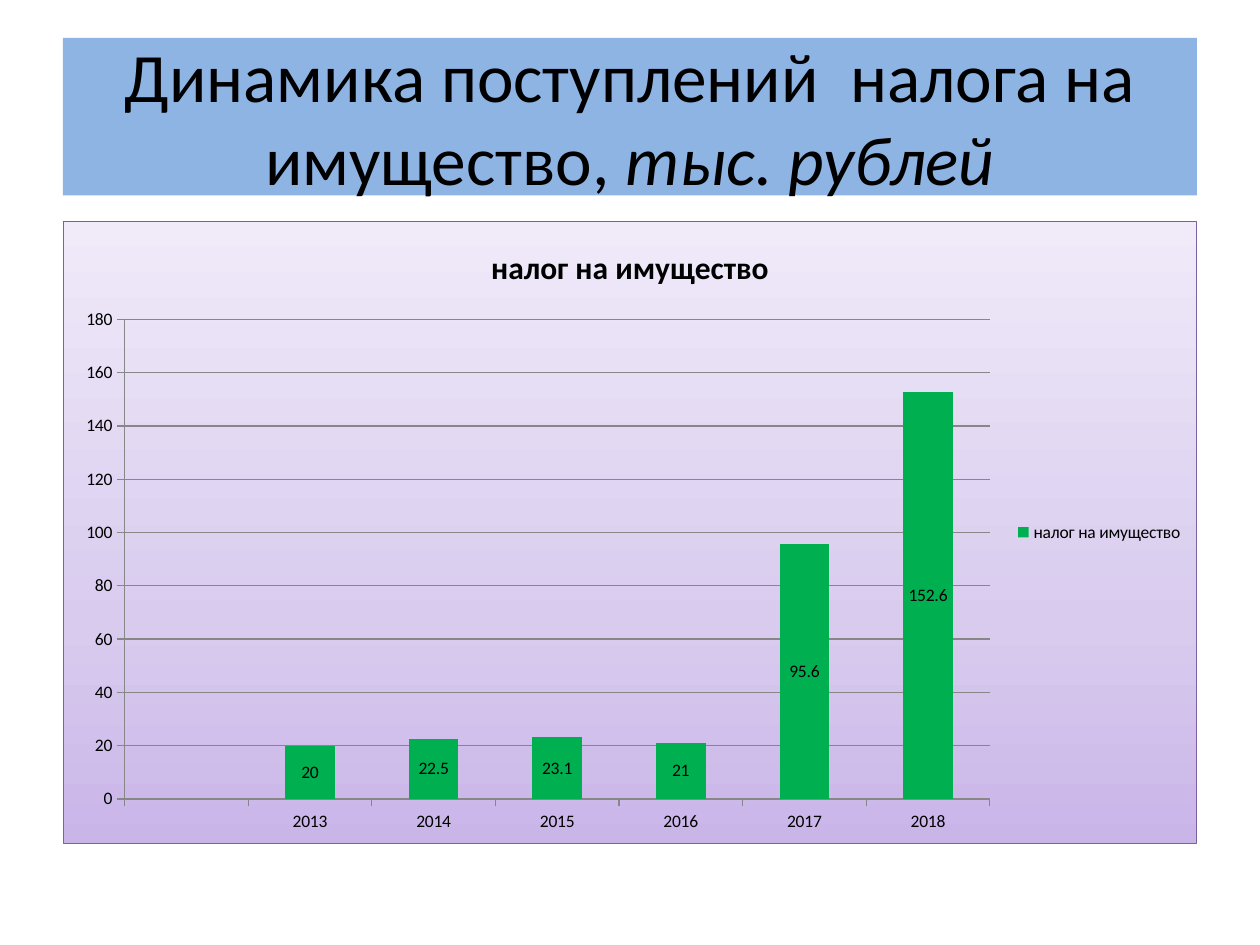
import pptx
import pptx.chart.data
import pptx.dml.color
import pptx.enum.chart
import pptx.enum.shapes
import pptx.enum.text
import pptx.oxml
import pptx.oxml.ns
import pptx.util

Pt = pptx.util.Pt


def tint(code):
    return pptx.dml.color.RGBColor.from_string(code)


class Deck:
    """Holds the style and the current slide, and adds elements to it."""

    font, ink, grey = "Calibri", "000000", "878787"

    def __init__(self, wide, high):
        self.file = pptx.Presentation()
        self.file.slide_width, self.file.slide_height = Pt(wide), Pt(high)
        self.slide = self.file.slides.add_slide(self.file.slide_layouts[6])

    def style(self, font, size, bold=False, slant=False):
        font.name, font.size = self.font, Pt(size)
        font.bold, font.italic = bold, slant
        font.color.rgb = tint(self.ink)

    def banner(self, box, fill, size, runs):
        kind = pptx.enum.shapes.MSO_SHAPE.RECTANGLE
        shape = self.slide.shapes.add_shape(kind, *map(Pt, box))
        shape.shadow.inherit = False
        shape.fill.solid()
        shape.fill.fore_color.rgb = tint(fill)
        shape.line.fill.background()
        frame = shape.text_frame
        frame.word_wrap = True
        frame.vertical_anchor = pptx.enum.text.MSO_ANCHOR.MIDDLE
        para = frame.paragraphs[0]
        para.alignment = pptx.enum.text.PP_ALIGN.CENTER
        for text, slant in runs:
            run = para.add_run()
            run.text = text
            self.style(run.font, size, slant=slant)

    def columns(self, box, name, years, sums, fill):
        enum = pptx.enum.chart
        data = pptx.chart.data.CategoryChartData()
        data.categories = years
        data.add_series(name, sums)
        kind = enum.XL_CHART_TYPE.COLUMN_STACKED
        chart = self.slide.shapes.add_chart(kind, *map(Pt, box), data).chart
        self.style(chart.font, 10)
        chart.has_title = True
        run = chart.chart_title.text_frame.paragraphs[0].add_run()
        run.text = name
        self.style(run.font, 18, bold=True)
        chart.has_legend = True
        chart.legend.position = enum.XL_LEGEND_POSITION.RIGHT
        chart.legend.include_in_layout = False
        for axis in (chart.category_axis, chart.value_axis):
            axis.major_tick_mark = enum.XL_TICK_MARK.OUTSIDE
            self.rule(axis.format.line)
        scale = chart.value_axis
        scale.minimum_scale, scale.maximum_scale, scale.major_unit = 0, 180, 20
        scale.has_major_gridlines = True
        self.rule(scale.major_gridlines.format.line)
        plot = chart.plots[0]
        plot.vary_by_categories = False
        plot.gap_width, plot.overlap = 150, 100
        bars = plot.series[0]
        bars.format.fill.solid()
        bars.format.fill.fore_color.rgb = tint(fill)
        labels = bars.data_labels
        labels.show_value = True
        labels.position = enum.XL_LABEL_POSITION.CENTER
        self.style(labels.font, 10)
        return chart

    def rule(self, line):
        line.color.rgb = tint(self.grey)
        line.width = Pt(0.75)

    def shade(self, chart, stops, edge):
        marks = "".join(
            f'<a:gs pos="{spot * 1000}"><a:srgbClr val="{code}"/></a:gs>'
            for spot, code in stops)
        area = pptx.oxml.parse_xml(
            f'<c:spPr {pptx.oxml.ns.nsdecls("c", "a")}>'
            f'<a:gradFill rotWithShape="1"><a:gsLst>{marks}</a:gsLst>'
            f'<a:lin ang="{270 * 60000}" scaled="1"/></a:gradFill>'
            f'<a:ln w="{Pt(0.75)}"><a:solidFill><a:srgbClr val="{edge}"/>'
            '</a:solidFill></a:ln></c:spPr>')
        chart.element.find(pptx.oxml.ns.qn("c:chart")).addnext(area)


def main():
    deck = Deck(720, 540)
    deck.banner((36, 21.6, 648, 90), "8EB4E3", 39.6, [
        ("Динамика поступлений  налога на имущество, ", False),
        ("тыс. рублей", True)])
    years = ["", *map(str, range(2013, 2019))]
    sums = [None, 20, 22.5, 23.1, 21, 95.6, 152.6]
    chart = deck.columns((36, 126, 648, 356.4), "налог на имущество",
                         years, sums, "00B050")
    deck.shade(chart, [(0, "C9B5E8"), (35, "D8CBEE"), (100, "F0EAF9")],
               "7D60A0")
    deck.file.save("out.pptx")


if __name__ == "__main__":
    main()
